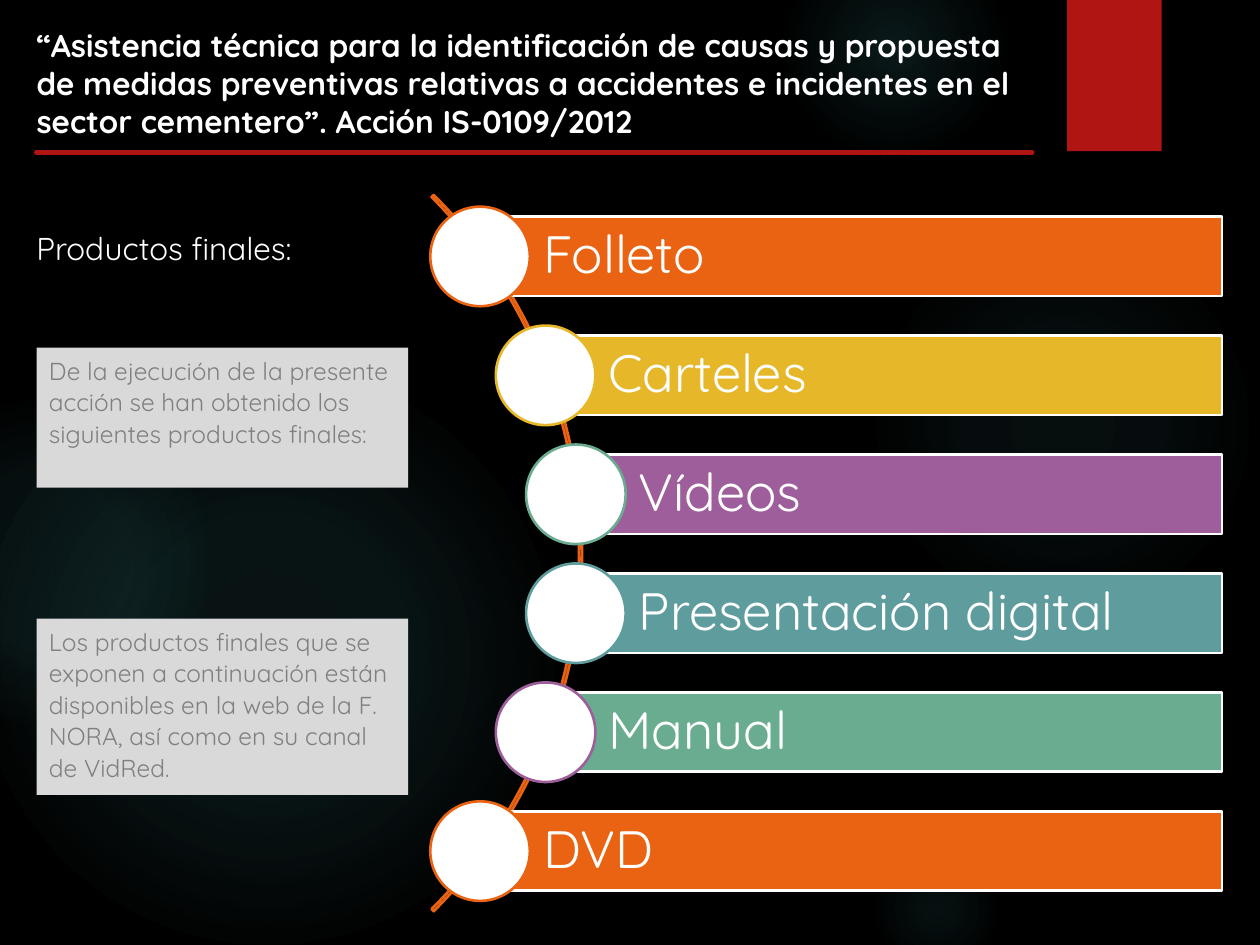
from lxml import etree
from pptx import Presentation
from pptx.dml.color import RGBColor
from pptx.enum.shapes import MSO_CONNECTOR, MSO_SHAPE
from pptx.enum.text import MSO_ANCHOR, PP_ALIGN
from pptx.oxml import parse_xml
from pptx.oxml.ns import nsdecls, qn
from pptx.util import Inches, Pt

FONT = "Quicksand"
WHITE, RED, ORANGE, GLOW = "FFFFFF", "B01513", "EA6312", "50B9C1"
PANEL, PANEL_TEXT = "D9D9D9", "808080"

TITLE = ("“Asistencia técnica para la identificación de causas y propuesta de medidas "
         "preventivas relativas a accidentes e incidentes en el sector cementero”. "
         "Acción IS-0109/2012")
HEADING = "Productos finales:"

# left, top, diameter, ((stop %, opacity %), ...)
GLOWS = [
    (6.89, 1.83, 3.08, ((0, 7), (36, 6), (69, 0))),
    (6.22, -0.5, 1.75, ((0, 14), (36, 7), (73, 0))),
    (6.89, 6.67, 1.08, ((0, 9), (36, 5), (66, 0))),
    (-0.17, 2.92, 4.58, ((0, 11), (36, 10), (75, 0))),
    (-0.92, 3.17, 2.58, ((0, 8), (36, 8), (72, 0))),
]
# top, height, text
PANELS = [
    (2.76, 1.11, "De la ejecución de la presente acción se han obtenido los "
                 "siguientes productos finales:"),
    (4.91, 1.4, "Los productos finales que se exponen a continuación están disponibles "
                "en la web de la F. NORA, así como en su canal de VidRed."),
]
# name, bar colour, ring colour
PRODUCTS = [
    ("Folleto", ORANGE, ORANGE),
    ("Carteles", "E6B729", "E6B729"),
    ("Vídeos", "9E5E9B", "6AAC90"),
    ("Presentación digital", "5F9C9D", "5F9C9D"),
    ("Manual", "6AAC90", "9E5E9B"),
    ("DVD", ORANGE, ORANGE),
]
BAR_LEFTS = (3.81, 4.33, 4.57)  # outermost to innermost, mirrored top and bottom
BAR_RIGHT, BAR_HEIGHT, CIRCLE = 9.7, 0.63, 0.79
FIRST_CENTER, ROW_STEP = 2.035, 0.944


def rgb(value):
    return RGBColor.from_string(value)


def place(shape, left, top, width, height):
    shape.left, shape.top = Inches(left), Inches(top)
    shape.width, shape.height = Inches(width), Inches(height)


def add_shape(slide, kind, box, fill=None, line=None):
    shape = slide.shapes.add_shape(kind, *map(Inches, box))
    shape.shadow.inherit = False
    if fill:
        shape.fill.solid()
        shape.fill.fore_color.rgb = rgb(fill)
    else:
        shape.fill.background()
    if line:
        shape.line.color.rgb = rgb(line)
        shape.line.width = Pt(1.5)
    else:
        shape.line.fill.background()
    return shape


def write(shape, text, size, color=WHITE, bold=False, spacing=1.0, after=0,
          anchor=MSO_ANCHOR.TOP, insets=(0.1, 0.05, 0.1, 0.05)):
    frame = shape.text_frame
    frame.word_wrap = True
    frame.vertical_anchor = anchor
    (frame.margin_left, frame.margin_top,
     frame.margin_right, frame.margin_bottom) = map(Inches, insets)
    para = frame.paragraphs[0]
    para.alignment = PP_ALIGN.LEFT
    para.line_spacing = spacing
    para.space_before, para.space_after = Pt(0), Pt(after)
    span = para.add_run()
    span.text = text
    span.font.name, span.font.size, span.font.bold = FONT, Pt(size), bold
    span.font.color.rgb = rgb(color)


def add_glow(slide, left, top, size, stops):
    """Add a circle that fades from its centre outwards."""
    shape = add_shape(slide, MSO_SHAPE.OVAL, (left, top, size, size))
    marks = "".join(
        f'<a:gs pos="{pos * 1000}"><a:srgbClr val="{GLOW}">'
        f'<a:alpha val="{alpha * 1000}"/></a:srgbClr></a:gs>' for pos, alpha in stops)
    gradient = parse_xml(
        f'<a:gradFill {nsdecls("a")}><a:gsLst>{marks}</a:gsLst><a:path path="circle">'
        '<a:fillToRect l="50000" t="50000" r="50000" b="50000"/></a:path></a:gradFill>')
    properties = shape._element.spPr
    properties.replace(properties.find(qn("a:noFill")), gradient)


def add_rule(slide, left, right, top):
    rule = slide.shapes.add_connector(
        MSO_CONNECTOR.STRAIGHT, *map(Inches, (left, top, right, top)))
    rule.line.color.rgb = rgb(RED)
    rule.line.width = Pt(3)
    rule.line._get_or_add_ln().set("cap", "rnd")
    etree.SubElement(rule._element.spPr, qn("a:effectLst"))


def add_product(slide, row, name, color, ring):
    left = BAR_LEFTS[min(row, len(PRODUCTS) - 1 - row)]
    center = FIRST_CENTER + row * ROW_STEP
    bar = add_shape(slide, MSO_SHAPE.RECTANGLE,
                    (left, center - BAR_HEIGHT / 2, BAR_RIGHT - left, BAR_HEIGHT),
                    color, WHITE)
    write(bar, name, 30, spacing=0.9, anchor=MSO_ANCHOR.MIDDLE,
          insets=(0.5, 0.08, 0.08, 0.08))
    add_shape(slide, MSO_SHAPE.OVAL,
              (left - CIRCLE / 2, center - CIRCLE / 2, CIRCLE, CIRCLE), WHITE, ring)


def main():
    deck = Presentation()
    deck.slide_width, deck.slide_height = Inches(10), Inches(7.5)
    slide = deck.slides.add_slide(deck.slide_layouts[5])
    slide.background.fill.solid()
    slide.background.fill.fore_color.rgb = rgb("000000")

    for glow in GLOWS:
        add_glow(slide, *glow)
    add_shape(slide, MSO_SHAPE.RECTANGLE, (8.47, 0, 0.75, 1.2), RED)

    title = slide.shapes.title
    slide.shapes._spTree.append(title._element)  # bring in front of the glows
    place(title, 0.19, 0.16, 8.17, 1.01)
    write(title, TITLE, 18, bold=True)
    add_rule(slide, 0.29, 8.19, 1.21)

    heading = slide.shapes.add_textbox(*map(Inches, (0.19, 1.75, 3.57, 0.43)))
    write(heading, HEADING, 18, spacing=1.07, after=8)
    for top, height, text in PANELS:
        panel = add_shape(slide, MSO_SHAPE.RECTANGLE, (0.29, top, 2.95, height), PANEL)
        write(panel, text, 14, PANEL_TEXT, spacing=1.07, after=8)

    arc = add_shape(slide, MSO_SHAPE.BLOCK_ARC, (-3.42, 0.37, 8.04, 8.04), line=ORANGE)
    for index, value in enumerate((189, 27, 0.003)):  # from -45 to 45 degrees, thin
        arc.adjustments[index] = value
    for row, product in enumerate(PRODUCTS):
        add_product(slide, row, *product)

    deck.save("out.pptx")


if __name__ == "__main__":
    main()
